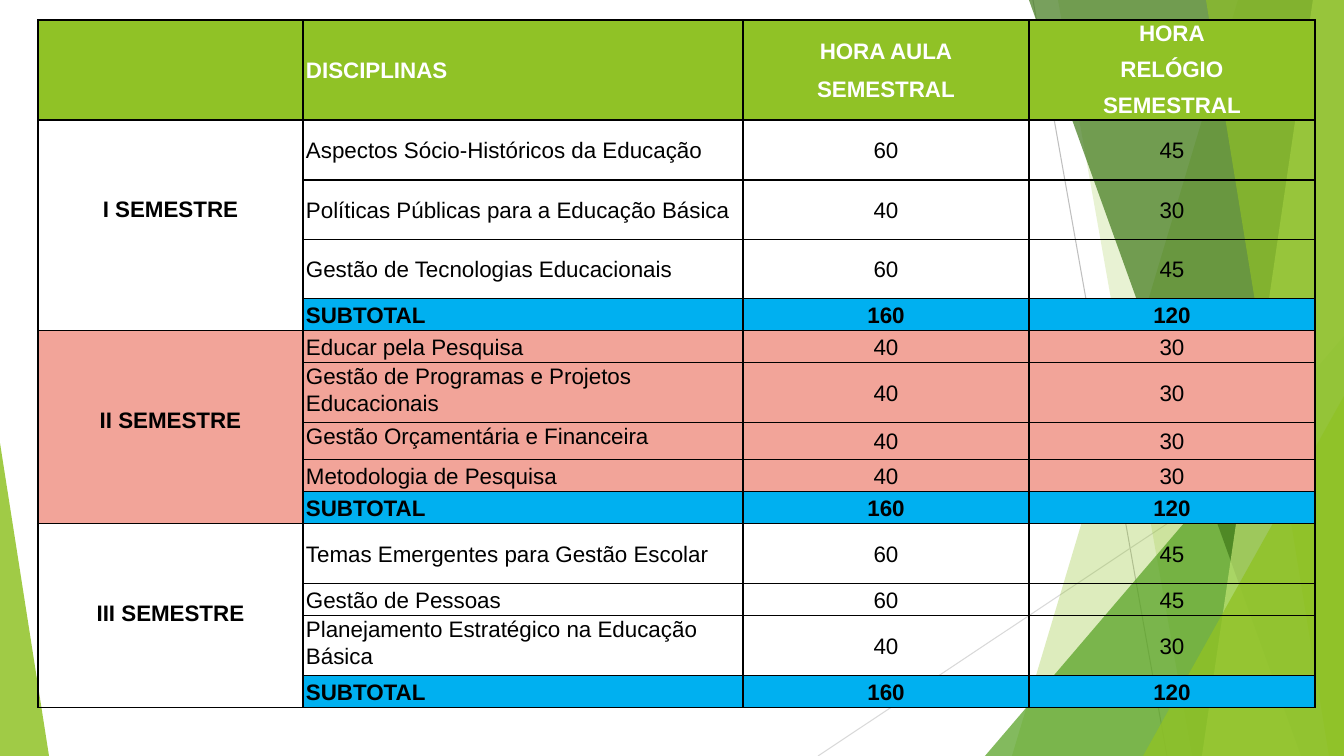
from lxml import etree
from pptx import Presentation
from pptx import util as u
from pptx.dml.color import RGBColor
from pptx.enum import shapes, text
from pptx.oxml import ns

PX = 12192000 / 1344
FONT = "Arial"
BLACK = RGBColor(0x00, 0x00, 0x00)
WHITE = RGBColor(0xFF, 0xFF, 0xFF)
GREEN = RGBColor(0x90, 0xC2, 0x26)
MID_GREEN = RGBColor(0x54, 0xA0, 0x21)
DARK_GREEN = RGBColor(0x3F, 0x78, 0x19)
PALE_GREEN = RGBColor(0xC0, 0xE4, 0x74)
BLUE = RGBColor(0x00, 0xB0, 0xF0)
SALMON = RGBColor(0xF2, 0xA4, 0x99)
GREY = RGBColor(0xBF, 0xBF, 0xBF)
LIGHT_GREY = RGBColor(0xD9, 0xD9, 0xD9)

TOP, MIDDLE = text.MSO_ANCHOR.TOP, text.MSO_ANCHOR.MIDDLE
LEFT, CENTER = text.PP_ALIGN.LEFT, text.PP_ALIGN.CENTER

COLUMNS = [265, 440, 286, 286]
HEADER_HEIGHT, SUBTOTAL_HEIGHT = 100, 32
LABEL_INSET = 76  # places each semester name below the top of its merged cell
CLOCK_RATIO = 3 / 4  # a class hour lasts 45 minutes

# semester, fill, [(subject, class hours, row height, anchor)]
SEMESTERS = [
    ("I SEMESTRE", None, [
        ("Aspectos Sócio-Históricos da Educação", 60, 60, MIDDLE),
        ("Políticas Públicas para a Educação Básica", 40, 60, MIDDLE),
        ("Gestão de Tecnologias Educacionais", 60, 59, MIDDLE)]),
    ("II SEMESTRE", SALMON, [
        ("Educar pela Pesquisa", 40, 32, MIDDLE),
        ("Gestão de Programas e Projetos Educacionais", 40, 60, TOP),
        ("Gestão Orçamentária e Financeira", 40, 37, TOP),
        ("Metodologia de Pesquisa", 40, 32, MIDDLE)]),
    ("III SEMESTRE", None, [
        ("Temas Emergentes para Gestão Escolar", 60, 60, MIDDLE),
        ("Gestão de Pessoas", 60, 32, MIDDLE),
        ("Planejamento Estratégico na Educação Básica", 40, 60, TOP)]),
]


def px(n):
    return u.Emu(round(n * PX))


def set_all(obj, values):
    for name, value in values.items():
        setattr(obj, name, value)


def paint(sp, color, opacity):
    """Fill a shape with a see-through colour, without line or shadow."""
    sp.shadow.inherit = False
    sp.line.fill.background()
    sp.fill.solid()
    sp.fill.fore_color.rgb = color
    clr = sp.fill._xPr.find(".//" + ns.qn("a:srgbClr"))
    etree.SubElement(clr, ns.qn("a:alpha")).set("val", str(opacity * 1000))


def add_thin_line(s, x1, y1, x2, y2, color):
    line = s.shapes.add_connector(shapes.MSO_CONNECTOR.STRAIGHT,
                                  px(x1), px(y1), px(x2), px(y2))
    set_all(line.line, {"width": u.Pt(0.75)})
    line.line.color.rgb = color
    etree.SubElement(line._element.spPr, ns.qn("a:effectLst"))


def add_band(s, top_x, bottom_x, right, height, color, opacity):
    """Full-height panel with a slanted left edge."""
    fb = s.shapes.build_freeform(top_x, 0, scale=PX)
    fb.add_line_segments([(right, 0), (right, height), (bottom_x, height)], close=True)
    paint(fb.convert_to_shape(), color, opacity)


def add_corner(s, x, y, w, h, apex, color, opacity):
    """Right triangle whose apex is at the left (0) or the right (1)."""
    sp = s.shapes.add_shape(shapes.MSO_SHAPE.ISOSCELES_TRIANGLE, px(x), px(y), px(w), px(h))
    sp.adjustments[0] = apex
    paint(sp, color, opacity)


def draw_backdrop(s, w, h):
    add_thin_line(s, w - 311, 0, w - 177, h, GREY)
    add_thin_line(s, w, 406, w - 526, h, LIGHT_GREY)
    add_band(s, w - 106, w - 332, w, h, GREEN, 30)
    add_band(s, w - 286, w - 152, w, h, GREEN, 20)
    add_corner(s, w - 359, h - 420, 359, 420, 1, MID_GREEN, 72)
    add_band(s, w - 315, w - 43, w, h, DARK_GREEN, 70)
    add_band(s, w - 31, w - 142, w, h, PALE_GREEN, 70)
    add_band(s, w - 138, w - 15, w, h, GREEN, 65)
    add_corner(s, w - 201, h - 360, 201, 360, 1, GREEN, 80)
    add_corner(s, 0, h - 313, 49, 313, 0, GREEN, 85)


def style_cell(cell, fill):
    set_all(cell, {"margin_left": px(3), "margin_right": px(3),
                   "margin_top": 0, "margin_bottom": 0, "vertical_anchor": MIDDLE})
    tcPr = cell._tc.get_or_add_tcPr()
    for side in ("a:lnL", "a:lnR", "a:lnT", "a:lnB"):
        ln = etree.SubElement(tcPr, ns.qn(side), w=str(u.Pt(1)))
        solid = etree.SubElement(ln, ns.qn("a:solidFill"))
        etree.SubElement(solid, ns.qn("a:srgbClr"), val=str(BLACK))
    if fill is None:
        cell.fill.background()
    else:
        cell.fill.solid()
        cell.fill.fore_color.rgb = fill


def write(cell, lines, align=CENTER, bold=False, color=BLACK, spacing=1.07):
    tf = cell.text_frame
    for i, line in enumerate(lines):
        p = tf.add_paragraph() if i else tf.paragraphs[0]
        set_all(p, {"alignment": align, "line_spacing": spacing, "space_after": u.Pt(8)})
        r = p.add_run()
        r.text = line
        set_all(r.font, {"name": FONT, "size": u.Pt(16), "bold": bold})
        r.font.color.rgb = color


def fill_row(table, row, values, fill, **font):
    """Style a whole row and write its last three cells."""
    for col, lines in enumerate([[]] + values):
        cell = table.cell(row, col)
        style_cell(cell, fill)
        write(cell, lines, LEFT if col == 1 else CENTER, **font)


def draw_semester(table, first, name, fill, subjects):
    """Write one semester from row first on, and return the row after it."""
    for row, (subject, hours, _, anchor) in enumerate(subjects, first):
        fill_row(table, row, [[subject], [str(hours)], [f"{hours * CLOCK_RATIO:.0f}"]], fill)
        table.cell(row, 1).vertical_anchor = anchor
    last = first + len(subjects)
    total = sum(hours for _, hours, _, _ in subjects)
    fill_row(table, last, [["SUBTOTAL"], [str(total)], [f"{total * CLOCK_RATIO:.0f}"]],
             BLUE, bold=True)
    label = table.cell(first, 0)
    label.merge(table.cell(last, 0))
    if fill is None:
        label.fill.background()
    else:
        label.fill.solid()
        label.fill.fore_color.rgb = fill
    set_all(label, {"vertical_anchor": TOP, "margin_top": px(LABEL_INSET)})
    write(label, [name], bold=True)
    return last + 1


def draw_curriculum(s, x, y):
    heights = [HEADER_HEIGHT]
    for _, _, subjects in SEMESTERS:
        heights += [height for _, _, height, _ in subjects] + [SUBTOTAL_HEIGHT]
    table = s.shapes.add_table(len(heights), len(COLUMNS), px(x), px(y),
                               px(sum(COLUMNS)), px(sum(heights))).table
    set_all(table, {"first_row": False, "horz_banding": False})
    for column, width in zip(table.columns, COLUMNS):
        column.width = px(width)
    for row, height in zip(table.rows, heights):
        row.height = px(height)

    fill_row(table, 0, [["DISCIPLINAS"], ["HORA AULA", "SEMESTRAL"],
                        ["HORA", "RELÓGIO", "SEMESTRAL"]], GREEN, bold=True, color=WHITE)
    for p in table.cell(0, 3).text_frame.paragraphs:
        p.line_spacing = 1.0
    row = 1
    for name, fill, subjects in SEMESTERS:
        row = draw_semester(table, row, name, fill, subjects)


def main():
    prs = Presentation()
    set_all(prs, {"slide_width": px(1344), "slide_height": px(756)})
    s = prs.slides.add_slide(prs.slide_layouts[6])
    draw_backdrop(s, 1344, 756)
    draw_curriculum(s, 38, 20)
    prs.save("out.pptx")


if __name__ == "__main__":
    main()
